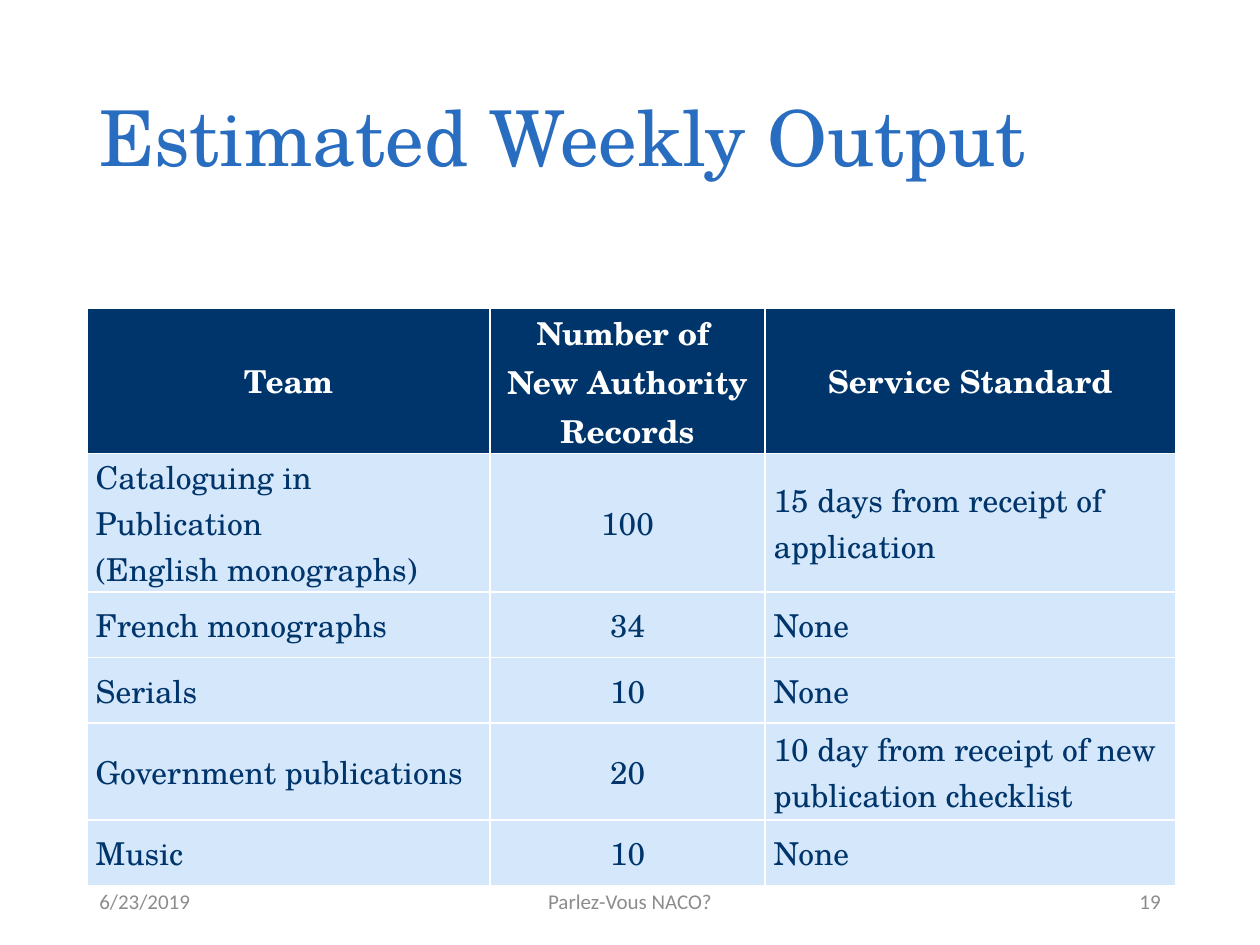
from lxml.etree import SubElement
from pptx import Presentation
from pptx.dml.color import RGBColor
from pptx.enum.text import MSO_ANCHOR, PP_ALIGN
from pptx.oxml.ns import qn
from pptx.util import Inches, Pt

WIDTH, HEIGHT = 10, 7.5
SERIF, SANS = "TeX Gyre Schola", "Calibri"
NAVY, PALE, WHITE, BLUE, GREY = "00356B", "D5E7FB", "FFFFFF", "286DC0", "8C8C8C"
LEFT, CENTER, RIGHT = PP_ALIGN.LEFT, PP_ALIGN.CENTER, PP_ALIGN.RIGHT

HEADER = ["Team", "Number of \nNew Authority Records", "Service Standard"]
TEAMS = [
    ["Cataloguing in Publication\n(English monographs)", "100",
     "15 days from receipt of application"],
    ["French monographs", "34", "None"],
    ["Serials", "10", "None"],
    ["Government publications", "20",
     "10 day from receipt of new publication checklist"],
    ["Music", "10", "None"],
]
COL_SHARES = [0.32, 0.218, 0.326]
HEAD, THREE_LINES, TWO_LINES, ONE_LINE = (h / HEIGHT for h in (1.15, 1.1, 0.77, 0.52))
ROW_SHARES = [HEAD, THREE_LINES, ONE_LINE, ONE_LINE, TWO_LINES, ONE_LINE]


def color(value):
    return RGBColor.from_string(value)


def across(share):
    return Inches(WIDTH * share)


def down(share):
    return Inches(HEIGHT * share)


def place(box):
    x, y, w, h = box
    return across(x), down(y), across(w), down(h)


def write(tf, text, font, size, fill, align=LEFT, bold=False):
    tf.text = text
    tf.word_wrap = True
    for p in tf.paragraphs:
        p.alignment = align
        for r in p.runs:
            r.font.name = font
            r.font.size = Pt(size)
            r.font.bold = bold
            r.font.color.rgb = color(fill)


def add_text(s, box, *style):
    tf = s.shapes.add_textbox(*place(box)).text_frame
    tf.vertical_anchor = MSO_ANCHOR.MIDDLE
    write(tf, *style)
    return tf


def add_title(s, box):
    tf = add_text(s, box, "Estimated Weekly Output", SERIF, 44, BLUE)
    tf.paragraphs[0].line_spacing = 0.9


def add_footer(s, box):
    x, y, w, h = box
    side, middle = w * 0.261, w * 0.392
    parts = [
        (x, side, "6/23/2019", LEFT),
        (x + (w - middle) / 2, middle, "Parlez-Vous NACO?", CENTER),
        (x + w - side, side, "19", RIGHT),
    ]
    for left, width, text, align in parts:
        add_text(s, (left, y, width, h), text, SANS, 12, GREY, align)


def add_borders(cell):
    tc_pr = cell._tc.get_or_add_tcPr()
    for side in ("a:lnL", "a:lnR", "a:lnT", "a:lnB"):
        ln = SubElement(tc_pr, qn(side), w=str(Pt(1)))
        fill = SubElement(ln, qn("a:solidFill"))
        SubElement(fill, qn("a:srgbClr"), val=WHITE)


def style_cell(cell, text, is_header, align):
    add_borders(cell)
    cell.fill.solid()
    cell.fill.fore_color.rgb = color(NAVY if is_header else PALE)
    cell.vertical_anchor = MSO_ANCHOR.MIDDLE
    cell.margin_left = cell.margin_right = Inches(0.07)
    cell.margin_top = cell.margin_bottom = 0
    write(cell.text_frame, text, SERIF, 18,
          WHITE if is_header else NAVY, align, is_header)


def add_output_table(s, x, y):
    rows = [HEADER] + TEAMS
    box = (x, y, sum(COL_SHARES), sum(ROW_SHARES))
    table = s.shapes.add_table(len(rows), len(HEADER), *place(box)).table
    for column, share in zip(table.columns, COL_SHARES):
        column.width = across(share)
    for row, share in zip(table.rows, ROW_SHARES):
        row.height = down(share)
    for i, values in enumerate(rows):
        for j, text in enumerate(values):
            align = CENTER if i == 0 or j == 1 else LEFT
            style_cell(table.cell(i, j), text, i == 0, align)


def main():
    prs = Presentation()
    prs.slide_width, prs.slide_height = Inches(WIDTH), Inches(HEIGHT)
    s = prs.slides.add_slide(prs.slide_layouts[6])
    margin, content = 0.069, 0.862
    add_title(s, (margin, 0.4 / HEIGHT, content, 1.45 / HEIGHT))
    add_footer(s, (margin, 6.95 / HEIGHT, content, 0.4 / HEIGHT))
    add_output_table(s, margin, 2.45 / HEIGHT)
    prs.save("out.pptx")


if __name__ == "__main__":
    main()
